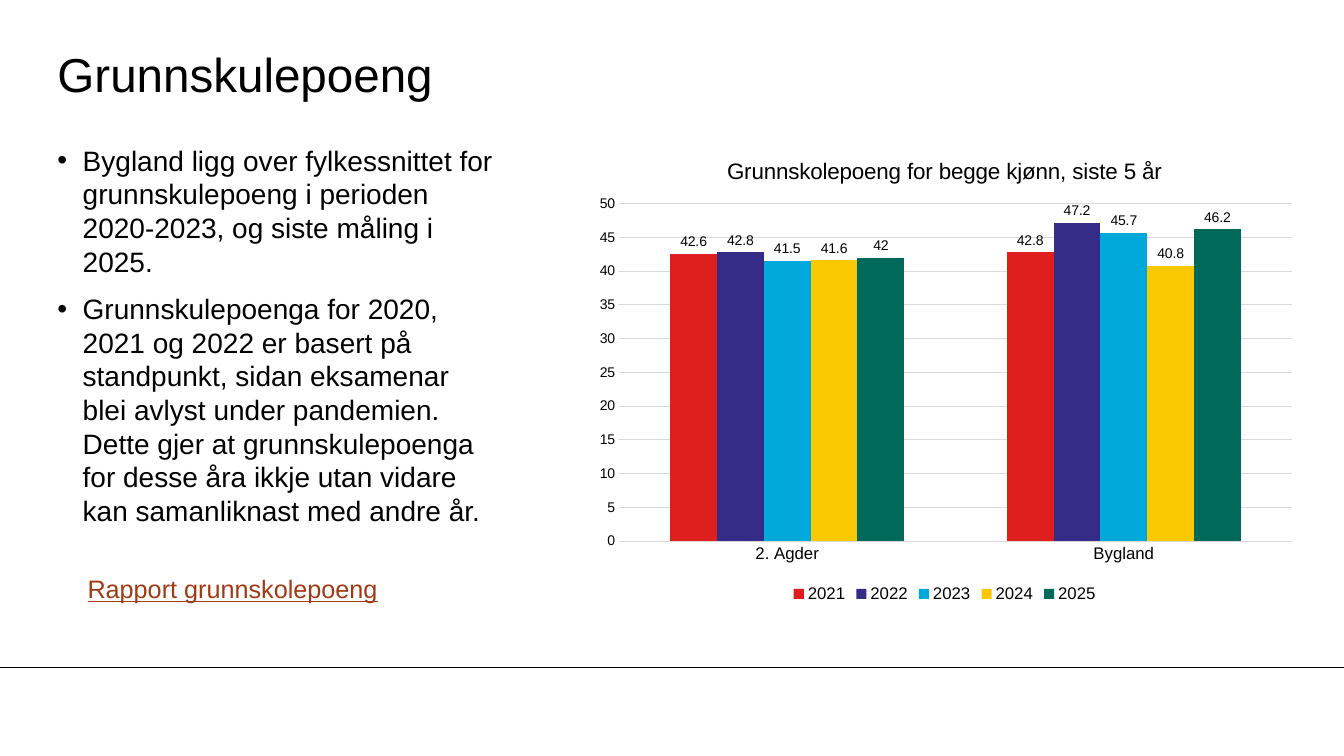
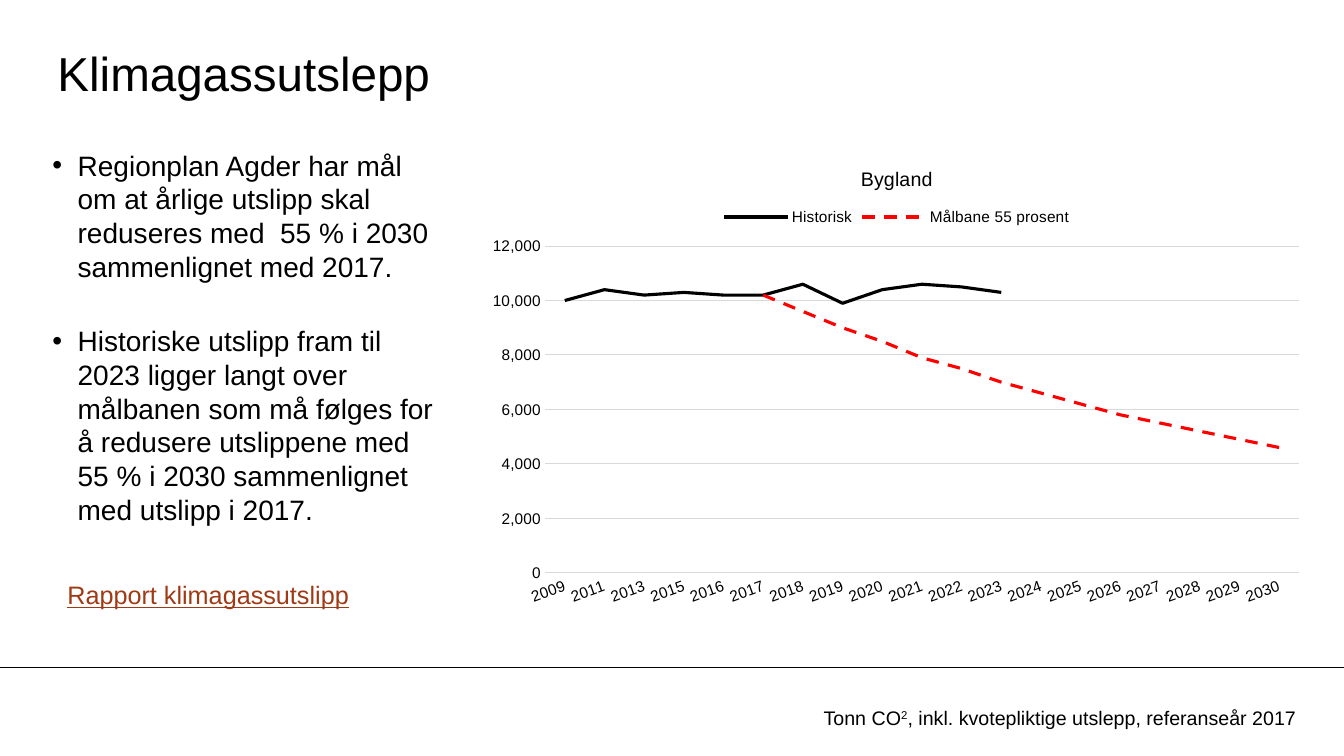
from dataclasses import dataclass
from typing import Any

from lxml.etree import SubElement
from pptx import Presentation
from pptx.chart.axis import CategoryAxis, ValueAxis
from pptx.chart.chart import Chart
from pptx.chart.data import CategoryChartData
from pptx.dml.color import RGBColor
from pptx.enum.chart import (XL_CHART_TYPE, XL_LABEL_POSITION,
                             XL_LEGEND_POSITION, XL_TICK_MARK)
from pptx.enum.dml import MSO_LINE
from pptx.enum.shapes import MSO_CONNECTOR
from pptx.enum.text import MSO_ANCHOR, MSO_AUTO_SIZE, PP_ALIGN
from pptx.oxml.ns import qn
from pptx.slide import Slide
from pptx.text.text import Font, TextFrame
from pptx.util import Inches, Pt

BLACK, RED, GRID, LINK = "000000", "FF0000", "D9D9D9", "9F3A14"
SLIDE_WIDTH, SLIDE_HEIGHT = 13.33, 7.5
RULE_TOP = 6.62
HANGING_INDENT = 0.25
TITLE_AND_CONTENT = 1

Box = tuple[float, float, float, float]


@dataclass(frozen=True)
class Series:
    name: str
    values: tuple
    color: str
    dash: Any = None


@dataclass(frozen=True)
class ChartSpec:
    """plot gives the inner plot area as fractions of the chart."""
    box: Box
    kind: Any
    title: str
    title_size: int
    categories: tuple
    series: tuple
    plot: Box
    category_size: int
    value_size: int
    value_format: str
    maximum: float
    step: float
    legend_position: Any
    category_rotation: int = 0


@dataclass(frozen=True)
class Note:
    """Each run is a text and its baseline shift in percent."""
    box: Box
    runs: tuple
    size: int
    color: str = BLACK
    underline: bool = False


@dataclass(frozen=True)
class Page:
    title: str
    title_box: Box
    bullets: tuple
    bullets_box: Box
    bullet_gap: float
    notes: tuple
    chart: ChartSpec


PAGES = (
    Page(
        title="Grunnskulepoeng",
        title_box=(0.57, 0.35, 11.1, 0.75),
        bullets=(
            "Bygland ligg over fylkessnittet for grunnskulepoeng i perioden "
            "2020-2023, og siste måling i 2025.",
            "Grunnskulepoenga for 2020, 2021 og 2022 er basert på standpunkt, "
            "sidan eksamenar blei avlyst under pandemien. Dette gjer at "
            "grunnskulepoenga for desse åra ikkje utan vidare kan "
            "samanliknast med andre år.",
        ),
        bullets_box=(0.57, 1.42, 4.34, 3.9),
        bullet_gap=10,
        notes=(
            Note((0.77, 5.64, 3.3, 0.4), (("Rapport grunnskolepoeng", 0),),
                 18, LINK, True),
        ),
        chart=ChartSpec(
            box=(5.78, 1.37, 7.18, 4.65),
            kind=XL_CHART_TYPE.COLUMN_CLUSTERED,
            title="Grunnskolepoeng for begge kjønn, siste 5 år",
            title_size=16,
            categories=("2. Agder", "Bygland"),
            series=(
                Series("2021", (42.6, 42.8), "DF1F1D"),
                Series("2022", (42.8, 47.2), "342C86"),
                Series("2023", (41.5, 45.7), "00A9DA"),
                Series("2024", (41.6, 40.8), "FAC800"),
                Series("2025", (42, 46.2), "00695A"),
            ),
            plot=(0.05, 0.14, 0.93, 0.72),
            category_size=12,
            value_size=10,
            value_format="General",
            maximum=50,
            step=5,
            legend_position=XL_LEGEND_POSITION.BOTTOM,
        ),
    ),
    Page(
        title="Klimagassutslepp",
        title_box=(0.57, 0.34, 11.1, 0.75),
        bullets=(
            "Regionplan Agder har mål om at årlige utslipp skal reduseres "
            "med  55 % i 2030 sammenlignet med 2017.",
            "Historiske utslipp fram til 2023 ligger langt over målbanen som "
            "må følges for å redusere utslippene med 55 % i 2030 "
            "sammenlignet med utslipp i 2017.",
        ),
        bullets_box=(0.52, 1.47, 3.81, 3.87),
        bullet_gap=29.5,
        notes=(
            Note((8.07, 6.95, 5.09, 0.34),
                 (("Tonn CO", 0), ("2", 30),
                  (", inkl. kvotepliktige utslepp, referanseår 2017", 0)), 14),
            Note((0.57, 5.7, 3.16, 0.4), (("Rapport klimagassutslipp", 0),),
                 18, LINK, True),
        ),
        chart=ChartSpec(
            box=(4.74, 1.47, 8.31, 4.63),
            kind=XL_CHART_TYPE.LINE,
            title="Bygland",
            title_size=14,
            categories=("2009", "2011", "2013",
                        *(str(year) for year in range(2015, 2031))),
            series=(
                Series("Historisk",
                       (10000, 10400, 10200, 10300, 10200, 10200, 10600, 9900,
                        10400, 10600, 10500, 10300) + (None,) * 7, BLACK),
                Series("Målbane 55 prosent",
                       (None,) * 5 + (10200, 9600, 9000, 8500, 7900, 7500,
                                      7000, 6600, 6200, 5800, 5500, 5200,
                                      4900, 4600), RED, MSO_LINE.DASH),
            ),
            plot=(0.08, 0.21, 0.9, 0.7),
            category_size=11,
            value_size=11,
            value_format="#,##0",
            maximum=12000,
            step=2000,
            legend_position=XL_LEGEND_POSITION.TOP,
            category_rotation=-20,
        ),
    ),
)


def rgb(color: str) -> RGBColor:
    return RGBColor.from_string(color)


def inches(box: Box) -> list:
    return [Inches(length) for length in box]


def set_attributes(target: Any, values: dict) -> None:
    for name, value in values.items():
        setattr(target, name, value)


def style_font(font: Font, size: float, color: str = BLACK,
               underline: bool = False) -> None:
    set_attributes(font, {"name": "Arial", "size": Pt(size), "bold": False,
                          "underline": underline})
    font.color.rgb = rgb(color)


def style_line(line: Any, color: str, width: float) -> None:
    line.color.rgb = rgb(color)
    line.width = Pt(width)


def prepare_placeholder(shape: Any, box: Box, anchor: Any) -> TextFrame:
    geometry = dict(zip(("left", "top", "width", "height"), inches(box)))
    set_attributes(shape, geometry)
    margins = dict.fromkeys(("margin_left", "margin_top", "margin_right",
                             "margin_bottom"), 0)
    set_attributes(shape.text_frame, {
        **margins, "word_wrap": True, "auto_size": MSO_AUTO_SIZE.NONE,
        "vertical_anchor": anchor})
    return shape.text_frame


def add_title(slide: Slide, page: Page) -> None:
    frame = prepare_placeholder(slide.shapes.title, page.title_box,
                                MSO_ANCHOR.MIDDLE)
    frame.text = page.title
    paragraph = frame.paragraphs[0]
    paragraph.alignment = PP_ALIGN.LEFT
    style_font(paragraph.runs[0].font, 34)


def add_bullets(slide: Slide, page: Page) -> None:
    frame = prepare_placeholder(slide.placeholders[1], page.bullets_box,
                                MSO_ANCHOR.TOP)
    frame.text = "\n".join(page.bullets)
    for index, paragraph in enumerate(frame.paragraphs):
        properties = paragraph._p.get_or_add_pPr()
        properties.set("marL", str(Inches(HANGING_INDENT)))
        properties.set("indent", str(-Inches(HANGING_INDENT)))
        SubElement(properties, qn("a:buChar")).set("char", "•")
        set_attributes(paragraph, {
            "line_spacing": Pt(24), "space_after": Pt(0),
            "space_before": Pt(page.bullet_gap if index else 0)})
        style_font(paragraph.runs[0].font, 20)


def add_note(slide: Slide, note: Note) -> None:
    frame = slide.shapes.add_textbox(*inches(note.box)).text_frame
    set_attributes(frame, {"word_wrap": True,
                           "auto_size": MSO_AUTO_SIZE.SHAPE_TO_FIT_TEXT})
    for text, baseline in note.runs:
        run = frame.paragraphs[0].add_run()
        run.text = text
        style_font(run.font, note.size, note.color, note.underline)
        if baseline:
            run._r.get_or_add_rPr().set("baseline", str(baseline * 1000))


def add_rule(slide: Slide) -> None:
    rule = slide.shapes.add_connector(
        MSO_CONNECTOR.STRAIGHT,
        *inches((0, RULE_TOP, SLIDE_WIDTH, RULE_TOP)))
    style_line(rule.line, BLACK, 0.75)
    SubElement(rule._element.spPr, qn("a:effectLst"))


def place_plot(chart: Chart, plot: Box) -> None:
    plot_area = chart._chartSpace.chart.plotArea
    for old_layout in plot_area.findall(qn("c:layout")):
        plot_area.remove(old_layout)
    layout = plot_area.makeelement(qn("c:layout"))
    plot_area.insert(0, layout)
    manual = SubElement(layout, qn("c:manualLayout"))
    settings = {"layoutTarget": "inner", "xMode": "edge", "yMode": "edge",
                **dict(zip("xywh", plot))}
    for name, value in settings.items():
        SubElement(manual, qn(f"c:{name}")).set("val", str(value))


def style_axes(category: CategoryAxis, value: ValueAxis,
               spec: ChartSpec) -> None:
    for axis, size in ((category, spec.category_size),
                       (value, spec.value_size)):
        set_attributes(axis, {"major_tick_mark": XL_TICK_MARK.NONE,
                              "minor_tick_mark": XL_TICK_MARK.NONE})
        style_font(axis.tick_labels.font, size)
    style_line(category.format.line, GRID, 0.75)
    if spec.category_rotation:
        body = category._element.find(qn("c:txPr")).find(qn("a:bodyPr"))
        body.set("rot", str(spec.category_rotation * 60000))
    set_attributes(value, {"minimum_scale": 0, "maximum_scale": spec.maximum,
                           "major_unit": spec.step,
                           "has_major_gridlines": True})
    set_attributes(value.tick_labels, {"number_format": spec.value_format,
                                       "number_format_is_linked": False})
    value.format.line.fill.background()
    style_line(value.major_gridlines.format.line, GRID, 0.75)


def style_series(chart: Chart, spec: ChartSpec) -> None:
    plot = chart.plots[0]
    plot.vary_by_categories = False
    is_column = spec.kind == XL_CHART_TYPE.COLUMN_CLUSTERED
    if is_column:
        set_attributes(plot, {"gap_width": 219, "overlap": 0,
                              "has_data_labels": True})
        set_attributes(plot.data_labels, {
            "show_value": True, "position": XL_LABEL_POSITION.OUTSIDE_END})
        style_font(plot.data_labels.font, 10)
    for series, source in zip(plot.series, spec.series):
        if is_column:
            series.format.fill.solid()
            series.format.fill.fore_color.rgb = rgb(source.color)
        else:
            series.smooth = False
            style_line(series.format.line, source.color, 2.25)
            series.format.line.dash_style = source.dash


def add_chart(slide: Slide, spec: ChartSpec) -> None:
    data = CategoryChartData()
    data.categories = spec.categories
    for series in spec.series:
        data.add_series(series.name, series.values)
    chart = slide.shapes.add_chart(spec.kind, *inches(spec.box), data).chart
    style_font(chart.font, 10)
    chart.has_title = chart.has_legend = True
    title = chart.chart_title.text_frame
    title.text = spec.title
    style_font(title.paragraphs[0].runs[0].font, spec.title_size)
    set_attributes(chart.legend, {"position": spec.legend_position,
                                  "include_in_layout": False})
    style_font(chart.legend.font, spec.category_size)
    style_axes(chart.category_axis, chart.value_axis, spec)
    style_series(chart, spec)
    place_plot(chart, spec.plot)


def main() -> None:
    presentation = Presentation()
    presentation.slide_width = Inches(SLIDE_WIDTH)
    presentation.slide_height = Inches(SLIDE_HEIGHT)
    layout = presentation.slide_layouts[TITLE_AND_CONTENT]
    for page in PAGES:
        slide = presentation.slides.add_slide(layout)
        add_rule(slide)
        add_title(slide, page)
        add_bullets(slide, page)
        for note in page.notes:
            add_note(slide, note)
        add_chart(slide, page.chart)
    presentation.save("out.pptx")


if __name__ == "__main__":
    main()
